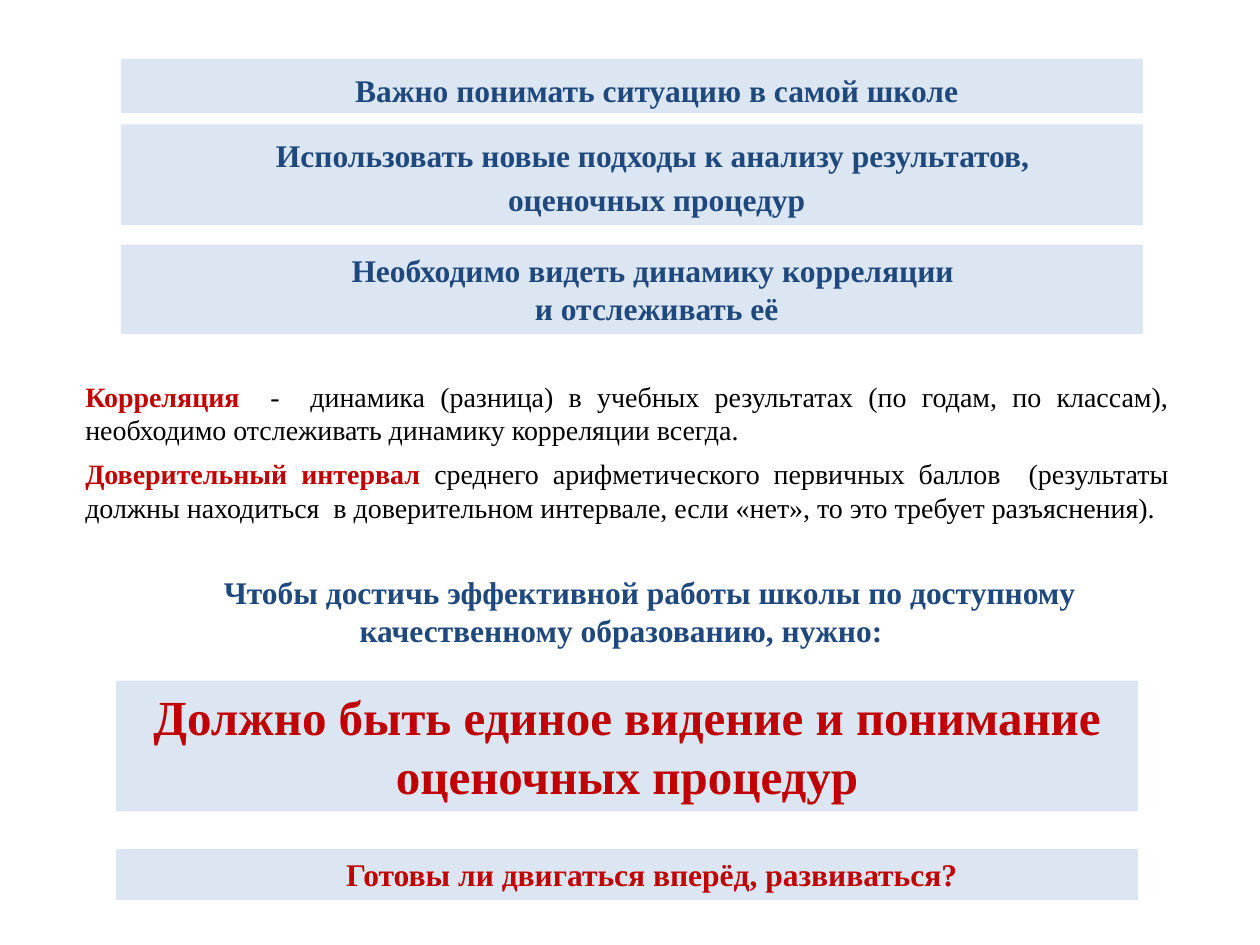
import dataclasses

import pptx
import pptx.dml.color
import pptx.enum.shapes
import pptx.enum.text
import pptx.util

Cm = pptx.util.Cm
Pt = pptx.util.Pt
Align = pptx.enum.text.PP_ALIGN


@dataclasses.dataclass(frozen=True)
class Theme:
    font: str = "Times New Roman"
    banner: str = "DCE6F2"
    blue: str = "1F497D"
    red: str = "C00000"
    black: str = "000000"
    body_size: int = 16
    heading_size: int = 18
    slogan_size: int = 28
    indent: float = 1
    space_after: int = 6


THEME = Theme()


def rgb(value):
    return pptx.dml.color.RGBColor.from_string(value)


def prepare_frame(shape):
    frame = shape.text_frame
    frame.word_wrap = True
    frame.auto_size = pptx.enum.text.MSO_AUTO_SIZE.SHAPE_TO_FIT_TEXT
    frame.vertical_anchor = pptx.enum.text.MSO_ANCHOR.TOP
    return frame


def add_banner(slide, left, top, width, height):
    shape = slide.shapes.add_shape(
        pptx.enum.shapes.MSO_SHAPE.RECTANGLE, Cm(left), Cm(top), Cm(width), Cm(height))
    shape.shadow.inherit = False
    shape.fill.solid()
    shape.fill.fore_color.rgb = rgb(THEME.banner)
    shape.line.fill.background()
    return prepare_frame(shape)


def add_text_area(slide, left, top, width, height):
    return prepare_frame(slide.shapes.add_textbox(Cm(left), Cm(top), Cm(width), Cm(height)))


def write_centred(frame, lines, color, size=THEME.heading_size, indent=THEME.indent,
                  line_spacing=None, space_after=0):
    frame.text = "\n".join(lines)
    for paragraph in frame.paragraphs:
        paragraph.alignment = Align.CENTER
        paragraph.line_spacing = line_spacing
        paragraph.space_after = Pt(space_after)
        paragraph.font.name = THEME.font
        paragraph.font.size = Pt(size)
        paragraph.font.bold = True
        paragraph.font.color.rgb = rgb(color)
        if indent:
            properties = paragraph._p.get_or_add_pPr()
            properties.set("marL", "0")
            properties.set("indent", str(Cm(indent)))


def add_principles(slide, left, top, width):
    principles = [
        (0, 1.09, 1.15, ["Важно понимать ситуацию в самой школе"]),
        (1.32, 2.03, 1.15, ["Использовать новые подходы к анализу результатов, ",
                            "оценочных процедур"]),
        (3.74, 1.8, None, ["Необходимо видеть динамику корреляции ", "и отслеживать её"]),
    ]
    for offset, height, line_spacing, lines in principles:
        frame = add_banner(slide, left, top + offset, width, height)
        write_centred(frame, lines, THEME.blue, line_spacing=line_spacing)


def add_definitions(slide, left, top, width, height):
    definitions = [
        ("Корреляция ",
         " -  динамика (разница) в учебных результатах (по годам, по классам), "
         "необходимо отслеживать динамику корреляции всегда."),
        ("Доверительный интервал ",
         "среднего арифметического первичных баллов  (результаты должны находиться  "
         "в доверительном интервале, если «нет», то это требует разъяснения)."),
    ]
    frame = add_text_area(slide, left, top, width, height)
    for index, (term, meaning) in enumerate(definitions):
        paragraph = frame.add_paragraph() if index else frame.paragraphs[0]
        paragraph.alignment = Align.JUSTIFY
        paragraph.space_after = Pt(THEME.space_after)
        paragraph.font.name = THEME.font
        paragraph.font.size = Pt(THEME.body_size)
        for text, color, bold in ((term, THEME.red, True), (meaning, THEME.black, False)):
            run = paragraph.add_run()
            run.text = text
            run.font.bold = bold
            run.font.color.rgb = rgb(color)


def add_goal(slide, left, top, width, height):
    frame = add_text_area(slide, left, top, width, height)
    goal = "Чтобы достичь эффективной работы школы по доступному качественному образованию, нужно: "
    write_centred(frame, [goal], THEME.blue, space_after=THEME.space_after)


def add_conclusion(slide, left, top, width):
    slogan = add_banner(slide, left, top, width, 2.64)
    write_centred(slogan, ["Должно быть единое видение и понимание оценочных процедур"],
                  THEME.red, size=THEME.slogan_size, indent=0)
    question = add_banner(slide, left, top + 3.4, width, 1.02)
    write_centred(question, ["Готовы ли двигаться вперёд, развиваться?"],
                  THEME.red, space_after=THEME.space_after)


def main():
    presentation = pptx.Presentation()
    presentation.slide_width = Cm(25.4)
    presentation.slide_height = Cm(19.05)
    slide = presentation.slides.add_slide(presentation.slide_layouts[6])
    add_principles(slide, 2.44, 1.19, 20.6)
    add_definitions(slide, 1.47, 7.52, 22.35, 3.2)
    add_goal(slide, 1.6, 11.43, 22, 1.8)
    add_conclusion(slide, 2.34, 13.72, 20.6)
    presentation.save("out.pptx")


if __name__ == "__main__":
    main()
